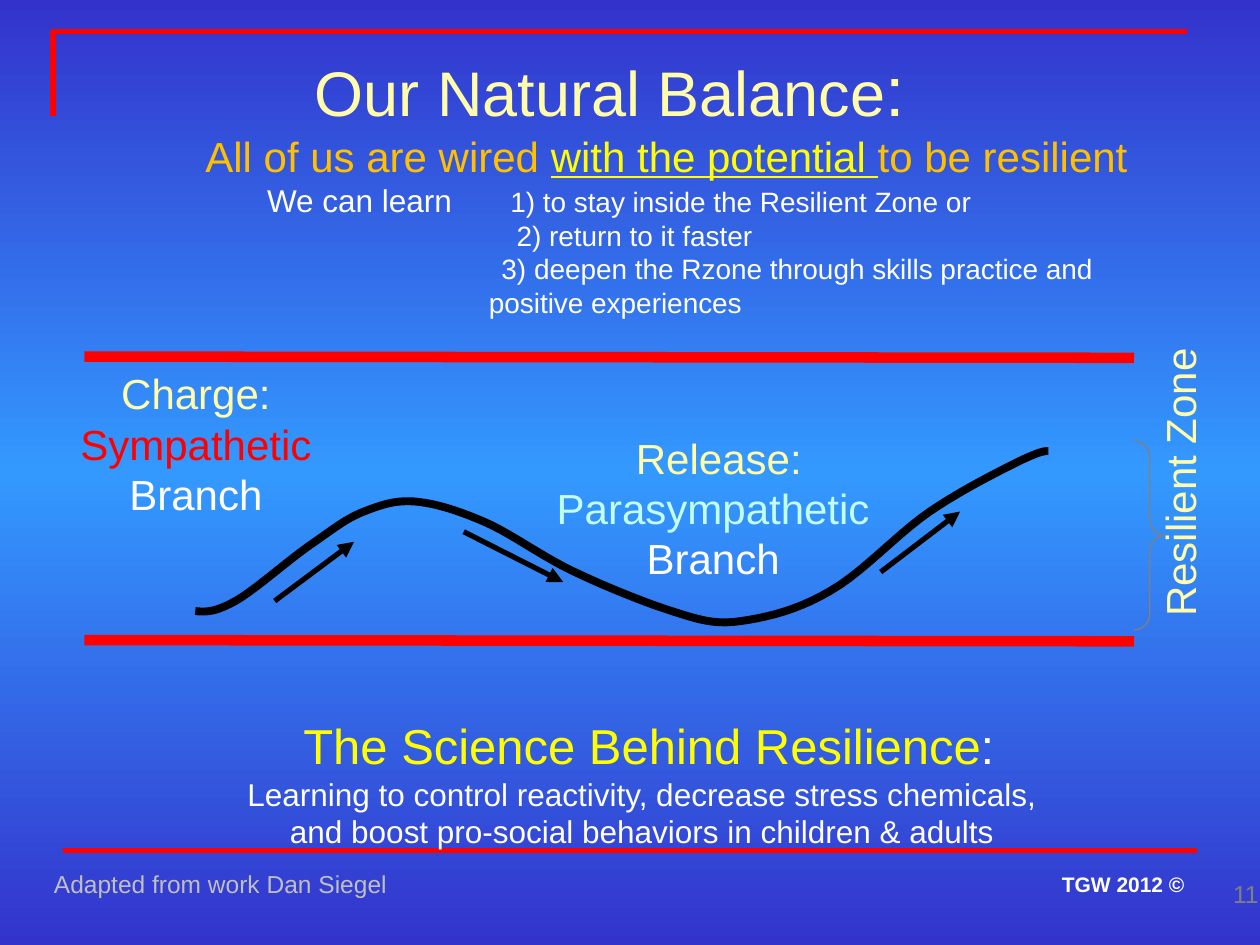
"""Build the "Our Natural Balance" slide about the Resilient Zone."""
from copy import deepcopy

from lxml.etree import SubElement
from pptx import Presentation
from pptx.dml.color import RGBColor
from pptx.enum.shapes import MSO_CONNECTOR, MSO_SHAPE
from pptx.enum.text import MSO_ANCHOR, MSO_AUTO_SIZE, PP_ALIGN
from pptx.oxml.ns import qn
from pptx.util import Inches, Pt

COLORS = {
    "edge": "3333CC", "middle": "3399FF", "red": "FF0000", "black": "000000",
    "white": "FFFFFF", "cream": "FFFCAB", "orange": "FFC000", "yellow": "FFFF00",
    "mint": "C2FFF0", "gray": "808080", "silver": "BFBFBF",
}
LEFT, CENTER, RIGHT = PP_ALIGN.LEFT, PP_ALIGN.CENTER, PP_ALIGN.RIGHT


def write(shape, rows, insets=(0.04, 0, 0.04, 0), anchor=MSO_ANCHOR.TOP, wrap=True):
    """Fill a shape with rows of (runs, size, alignment, paragraph margins in inches)."""
    frame = shape.text_frame
    frame.word_wrap = wrap
    frame.auto_size = MSO_AUTO_SIZE.NONE
    frame.vertical_anchor = anchor
    (frame.margin_left, frame.margin_top,
     frame.margin_right, frame.margin_bottom) = [Inches(inset) for inset in insets]
    for index, (runs, size, alignment, margins) in enumerate(rows):
        paragraph = frame.paragraphs[0] if index == 0 else frame.add_paragraph()
        paragraph.alignment = alignment
        for name, value in margins.items():
            paragraph._p.get_or_add_pPr().set(name, str(Inches(value)))
        paragraph.font.name = "Arial"
        paragraph.font.size = Pt(size)
        for text, color, *run_size in runs:
            run = paragraph.add_run()
            run.text = text
            run.font.color.rgb = RGBColor.from_string(COLORS[color])
            if run_size:
                run.font.size = Pt(run_size[0])


def draw_line(start, end, color, width, arrow=False):
    """Draw a straight line, with an arrowhead at its end if wanted."""
    line = slide.shapes.add_connector(
        MSO_CONNECTOR.STRAIGHT, *[Inches(value) for value in start + end])
    line.line.color.rgb = RGBColor.from_string(COLORS[color])
    line.line.width = Pt(width)
    if arrow:
        SubElement(line.line._get_or_add_ln(), qn("a:tailEnd"), type="triangle")
    SubElement(line._element.spPr, qn("a:effectLst"))


presentation = Presentation()
presentation.slide_width, presentation.slide_height = Inches(10), Inches(7.5)
slide = presentation.slides.add_slide(presentation.slide_layouts[5])

background = slide.background.fill
background.gradient()
background.gradient_angle = 90
stop_list = slide._element.xpath(".//a:gsLst")[0]
stop_list.insert(1, deepcopy(stop_list[0]))
for stop, position, color in zip(
        background.gradient_stops, (0, 0.5, 1), ("edge", "middle", "edge")):
    stop.position = position
    stop.color.rgb = RGBColor.from_string(COLORS[color])

wave_start = (1.55, 4.85)
wave_segments = [
    (1.63, 4.86, 1.71, 4.86, 1.87, 4.77), (2.03, 4.68, 2.33, 4.41, 2.5, 4.3),
    (2.67, 4.18, 2.76, 4.11, 2.89, 4.06), (3.02, 4.01, 3.13, 3.97, 3.28, 3.98),
    (3.44, 3.99, 3.63, 4.05, 3.84, 4.14), (4.05, 4.23, 4.29, 4.41, 4.54, 4.53),
    (4.79, 4.65, 5.11, 4.78, 5.33, 4.85), (5.55, 4.92, 5.67, 4.96, 5.88, 4.93),
    (6.09, 4.9, 6.34, 4.84, 6.59, 4.69), (6.84, 4.55, 7.13, 4.23, 7.38, 4.06),
    (7.63, 3.89, 7.93, 3.74, 8.09, 3.66), (8.24, 3.59, 8.28, 3.58, 8.32, 3.58),
]
steps = 10
wave = [wave_start]
for x1, y1, x2, y2, x3, y3 in wave_segments:
    x0, y0 = wave[-1]
    for step in range(1, steps + 1):
        t = step / steps
        u = 1 - t
        wave.append((
            u**3 * x0 + 3 * u * u * t * x1 + 3 * u * t * t * x2 + t**3 * x3,
            u**3 * y0 + 3 * u * u * t * y1 + 3 * u * t * t * y2 + t**3 * y3))

corner = [(0.42, 0.92), (0.42, 0.25), (9.42, 0.25)]
for points, color, width in ((corner, "red", 3), (wave, "black", 4.5)):
    points = [(Inches(x), Inches(y)) for x, y in points]
    builder = slide.shapes.build_freeform(*points[0])
    builder.add_line_segments(points[1:], close=False)
    outline = builder.convert_to_shape()
    outline.shadow.inherit = False
    outline.fill.background()
    outline.line.color.rgb = RGBColor.from_string(COLORS[color])
    outline.line.width = Pt(width)

draw_line((0.5, 6.75), (9.5, 6.75), "red", 3)
for y in (2.83, 5.08):
    draw_line((0.67, y), (9, y + 0.01), "red", 6)
for start, end in (((2.18, 4.77), (2.81, 4.3)), ((3.68, 4.22), (4.47, 4.62)),
                   ((6.99, 4.54), (7.62, 4.06))):
    draw_line(start, end, "black", 3, arrow=True)

brace = slide.shapes.add_shape(
    MSO_SHAPE.RIGHT_BRACE, Inches(9), Inches(3.5), Inches(0.25), Inches(1.5))
brace.adjustments[0] = 0.5
brace.shadow.inherit = False
brace.fill.background()
brace.line.color.rgb = RGBColor.from_string(COLORS["gray"])
brace.line.width = Pt(0.75)

title = slide.shapes.title
title.left, title.top = Inches(0.58), Inches(0.17)
title.width, title.height = Inches(8.68), Inches(2.56)
write(title, [
    ([("Our Natural Balance", "cream"), (":", "cream", 40)], 36, CENTER, {}),
    ([("All of us are wired ", "orange"), ("with the potential ", "yellow"),
      ("to be resilient", "orange")], 24, LEFT, {"marL": 1.05}),
    ([("We can learn\t", "white", 18), ("1) to stay inside the Resilient Zone or", "white")],
     16, LEFT, {"marL": 3.47, "indent": -1.93}),
    ([("2) return to it faster", "white")], 16, LEFT, {"marL": 3.52}),
    ([("3) deepen the Rzone through skills practice and positive experiences", "white")],
     16, LEFT, {"marL": 3.3, "indent": 0.1}),
], insets=(0, 0, 0.16, 0), anchor=MSO_ANCHOR.MIDDLE)
title.text_frame.paragraphs[1].runs[1].font.underline = True

footer = {"insets": (0.1, 0.05, 0.1, 0.05)}
labels = [
    ((0.25, 2.92, 2.7, 1.92), [
        ([("Charge:", "cream")], 24, CENTER, {"marR": 0.09}),
        ([("Sympathetic", "red")], 24, CENTER, {}),
        ([("Branch", "white")], 24, CENTER, {})], {}),
    ((4.36, 3.43, 2.6, 1.21), [
        ([("Release:", "cream")], 24, CENTER, {"marL": 0.09}),
        ([("Parasympathetic", "mint")], 24, CENTER, {}),
        ([("Branch", "white")], 24, CENTER, {})], {"wrap": False}),
    ((7.67, 3.99, 3.36, 0.38), [
        ([("Resilient Zone", "cream")], 24, CENTER, {"marL": 0.7})], {}),
    ((0.33, 5.68, 9.53, 1.18), [
        ([("The Science Behind Resilience", "yellow"), (":", "white")],
         28, CENTER, {"marL": 0.11}),
        ([("Learning to control reactivity, decrease stress chemicals,", "white")],
         18, CENTER, {}),
        ([("and boost pro-social behaviors in children & adults", "white")],
         18, CENTER, {})], {}),
    ((5.58, 6.67, 3.92, 0.5), [([("TGW 2012 ©", "white")], 12, RIGHT, {})],
     footer | {"anchor": MSO_ANCHOR.BOTTOM}),
    ((0.33, 6.85, 2.86, 0.34), [
        ([("Adapted from work Dan Siegel", "silver")], 14, LEFT, {})],
     footer | {"wrap": False}),
    ((7.67, 6.98, 2.36, 0.22), [([("11", "gray")], 14, RIGHT, {})], {}),
]
for box, rows, options in labels:
    label = slide.shapes.add_textbox(*[Inches(value) for value in box])
    write(label, rows, **options)
    text = label.text_frame.text
    if text == "Resilient Zone":
        label.rotation = 270
    elif text == "TGW 2012 ©":
        label.text_frame.paragraphs[0].font.bold = True

presentation.save("out.pptx")
